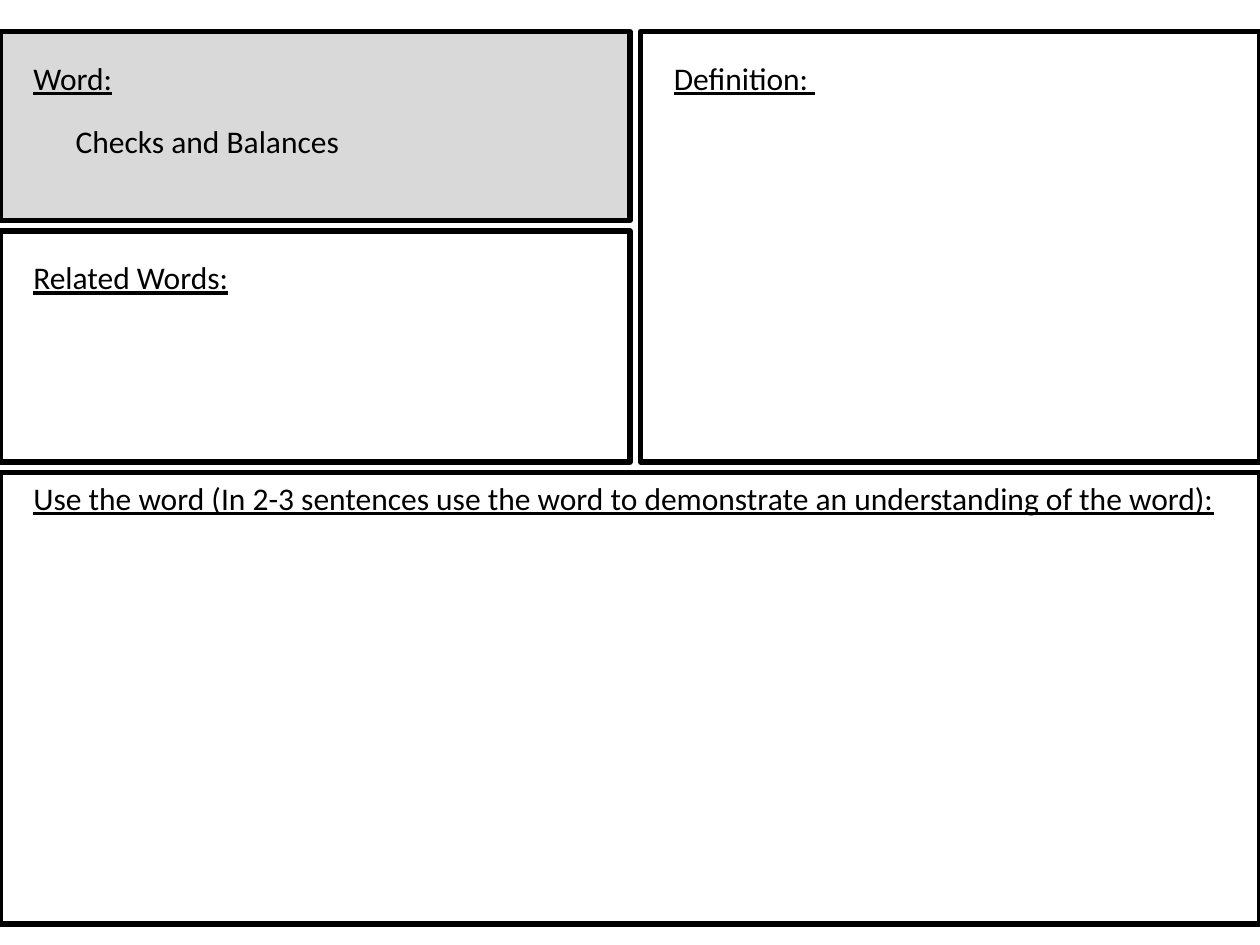
from pptx import Presentation
from pptx.dml.color import RGBColor
from pptx.enum.shapes import MSO_SHAPE
from pptx.enum.text import MSO_ANCHOR, MSO_AUTO_SIZE, PP_ALIGN
from pptx.util import Pt

RECTANGLE = MSO_SHAPE.RECTANGLE
TOP = MSO_ANCHOR.TOP
LEFT = PP_ALIGN.LEFT
FIT_SHAPE = MSO_AUTO_SIZE.SHAPE_TO_FIT_TEXT

SLIDE_WIDTH, SLIDE_HEIGHT = 720, 540
GAP = 6
MARGIN = 12
LABEL_HEIGHT = 29
TOP_EDGE = 18
LEFT_WIDTH = 360
WORD_HEIGHT, RELATED_HEIGHT, USAGE_HEIGHT = 108, 132, 258

TERM = "Checks and Balances"
TERM_BOX = (36, 66, 246, LABEL_HEIGHT)

right_x = LEFT_WIDTH + GAP
related_y = TOP_EDGE + WORD_HEIGHT + GAP
usage_y = related_y + RELATED_HEIGHT + GAP

# label, label width, label offset from panel top, panel box, panel fill
PANELS = [
    ("Word:", 60, MARGIN, (0, TOP_EDGE, LEFT_WIDTH, WORD_HEIGHT), "D9D9D9"),
    ("Definition: ", 96, MARGIN,
     (right_x, TOP_EDGE, SLIDE_WIDTH - right_x, usage_y - GAP - TOP_EDGE), None),
    ("Related Words:", 138, MARGIN,
     (0, related_y, LEFT_WIDTH, RELATED_HEIGHT), None),
    ("Use the word (In 2-3 sentences use the word to demonstrate "
     "an understanding of the word):", 696, 0,
     (0, usage_y, SLIDE_WIDTH, USAGE_HEIGHT), None),
]


def color(hex_code):
    return RGBColor.from_string(hex_code)


def add_panel(slide, box, fill):
    panel = slide.shapes.add_shape(RECTANGLE, *map(Pt, box))
    panel.shadow.inherit = False
    if fill:
        panel.fill.solid()
        panel.fill.fore_color.rgb = color(fill)
    else:
        panel.fill.background()
    panel.line.color.rgb = color("000000")
    panel.line.width = Pt(3)


def write(shape, text, size=18, font="Calibri", ink="000000", underline=False):
    frame = shape.text_frame
    frame.word_wrap = True
    frame.auto_size = FIT_SHAPE
    frame.vertical_anchor = TOP
    paragraph = frame.paragraphs[0]
    paragraph.alignment = LEFT
    run = paragraph.add_run()
    run.text = text
    run.font.size = Pt(size)
    run.font.name = font
    run.font.color.rgb = color(ink)
    run.font.underline = underline


def main():
    deck = Presentation()
    deck.slide_width, deck.slide_height = Pt(SLIDE_WIDTH), Pt(SLIDE_HEIGHT)
    slide = deck.slides.add_slide(deck.slide_layouts.get_by_name("Title Only"))

    for label, width, offset, box, fill in PANELS:
        add_panel(slide, box, fill)
        x, y = box[:2]
        heading = slide.shapes.add_textbox(
            Pt(x + MARGIN), Pt(y + offset), Pt(width), Pt(LABEL_HEIGHT))
        write(heading, label, underline=True)

    term = slide.shapes.title
    term.left, term.top, term.width, term.height = map(Pt, TERM_BOX)
    write(term, TERM)
    # The title starts out behind the shaded panel; bring it to the front.
    term.element.getparent().append(term.element)

    deck.save("out.pptx")


if __name__ == "__main__":
    main()
